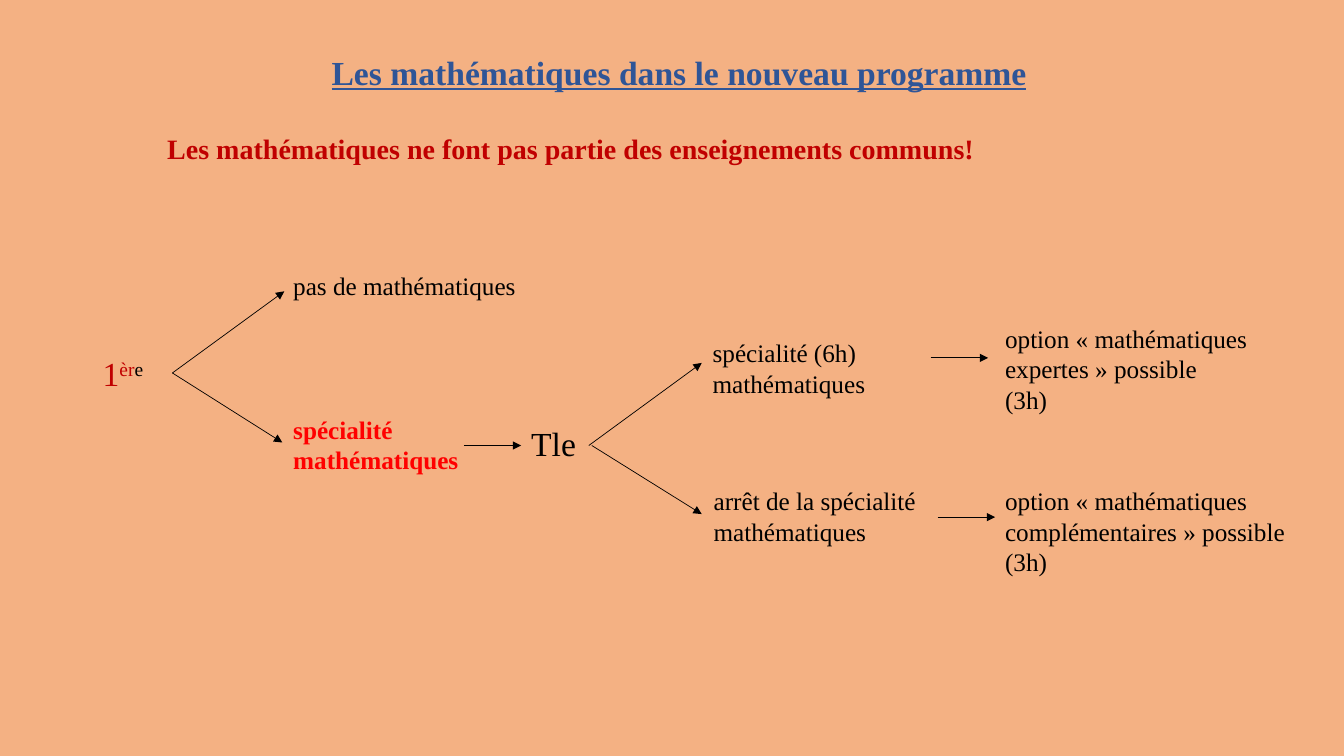
from lxml.etree import SubElement
from pptx import Presentation
from pptx.dml.color import RGBColor
from pptx.enum.shapes import MSO_CONNECTOR
from pptx.enum.text import MSO_ANCHOR, PP_ALIGN
from pptx.oxml.ns import qn
from pptx.util import Inches, Pt

PEACH = RGBColor(0xF4, 0xB1, 0x83)
BLUE = RGBColor(0x2F, 0x55, 0x97)
DARK_RED = RGBColor(0xC0, 0x00, 0x00)
RED = RGBColor(0xFF, 0x00, 0x00)
BLACK = RGBColor(0x00, 0x00, 0x00)


def place(shape, left, top, width, height):
    shape.left, shape.top = Inches(left), Inches(top)
    shape.width, shape.height = Inches(width), Inches(height)


def write(shape, lines, size, color, bold=False):
    frame = shape.text_frame
    frame.word_wrap = True
    frame.vertical_anchor = MSO_ANCHOR.TOP
    frame.text = "\n".join(lines)
    for para in frame.paragraphs:
        para.font.name = "Times New Roman"
        para.font.size = Pt(size)
        para.font.bold = bold
        para.font.color.rgb = color


deck = Presentation()
deck.slide_width, deck.slide_height = Inches(13.33), Inches(7.5)
page = deck.slides.add_slide(deck.slide_layouts[5])
page.background.fill.solid()
page.background.fill.fore_color.rgb = PEACH

title = page.shapes.title
place(title, 0.73, 0.46, 12.01, 0.5)
write(title, ["Les mathématiques dans le nouveau programme"], 24, BLUE, True)
title.text_frame.paragraphs[0].alignment = PP_ALIGN.CENTER
title.text_frame.paragraphs[0].font.underline = True

labels = [
    (1.56, 1.26, 10.59, 1.35, 20, DARK_RED, True,
     ["Les mathématiques ne font pas partie des enseignements communs!"]),
    (2.81, 2.63, 3.08, 0.4, 18, BLACK, False, ["pas de mathématiques"]),
    (2.81, 4.06, 3.08, 0.71, 18, RED, True, ["spécialité", "mathématiques"]),
    (5.17, 4.15, 0.78, 0.5, 24, BLACK, False, ["Tle"]),
    (6.97, 3.3, 3.08, 0.71, 18, BLACK, False, ["spécialité (6h)", "mathématiques"]),
    (6.98, 4.77, 4.09, 0.71, 18, BLACK, False,
     ["arrêt de la spécialité", "mathématiques"]),
    (9.87, 3.16, 4.09, 1.01, 18, BLACK, False,
     ["option « mathématiques", "expertes » possible", "(3h)"]),
    (9.87, 4.77, 4.09, 1.01, 18, BLACK, False,
     ["option « mathématiques complémentaires » possible", "(3h)"]),
]
for left, top, width, height, size, color, bold, lines in labels:
    box = page.shapes.add_textbox(0, 0, 0, 0)
    place(box, left, top, width, height)
    write(box, lines, size, color, bold)

grade = page.shapes.add_textbox(0, 0, 0, 0)
place(grade, 0.92, 3.45, 0.78, 0.5)
write(grade, ["1"], 24, DARK_RED)
for letters, color in [("èr", DARK_RED), ("e", BLACK)]:
    span = grade.text_frame.paragraphs[0].add_run()
    span.text = letters
    span.font.color.rgb = color
    span.font._element.set("baseline", "30000")

arrows = [
    (1.71, 3.7, 2.82, 2.89),
    (1.71, 3.7, 2.8, 4.39),
    (4.6, 4.42, 5.17, 4.42),
    (5.84, 4.42, 6.96, 3.6),
    (5.87, 4.42, 6.96, 5.1),
    (9.23, 3.55, 9.8, 3.55),
    (9.3, 5.13, 9.87, 5.13),
]
for ends in arrows:
    arrow = page.shapes.add_connector(MSO_CONNECTOR.STRAIGHT, *map(Inches, ends))
    arrow.line.color.rgb = BLACK
    arrow.line.width = Pt(0.5)
    SubElement(arrow.line._get_or_add_ln(), qn("a:tailEnd"), type="triangle")
    SubElement(arrow._element.spPr, qn("a:effectLst"))

deck.save("out.pptx")
